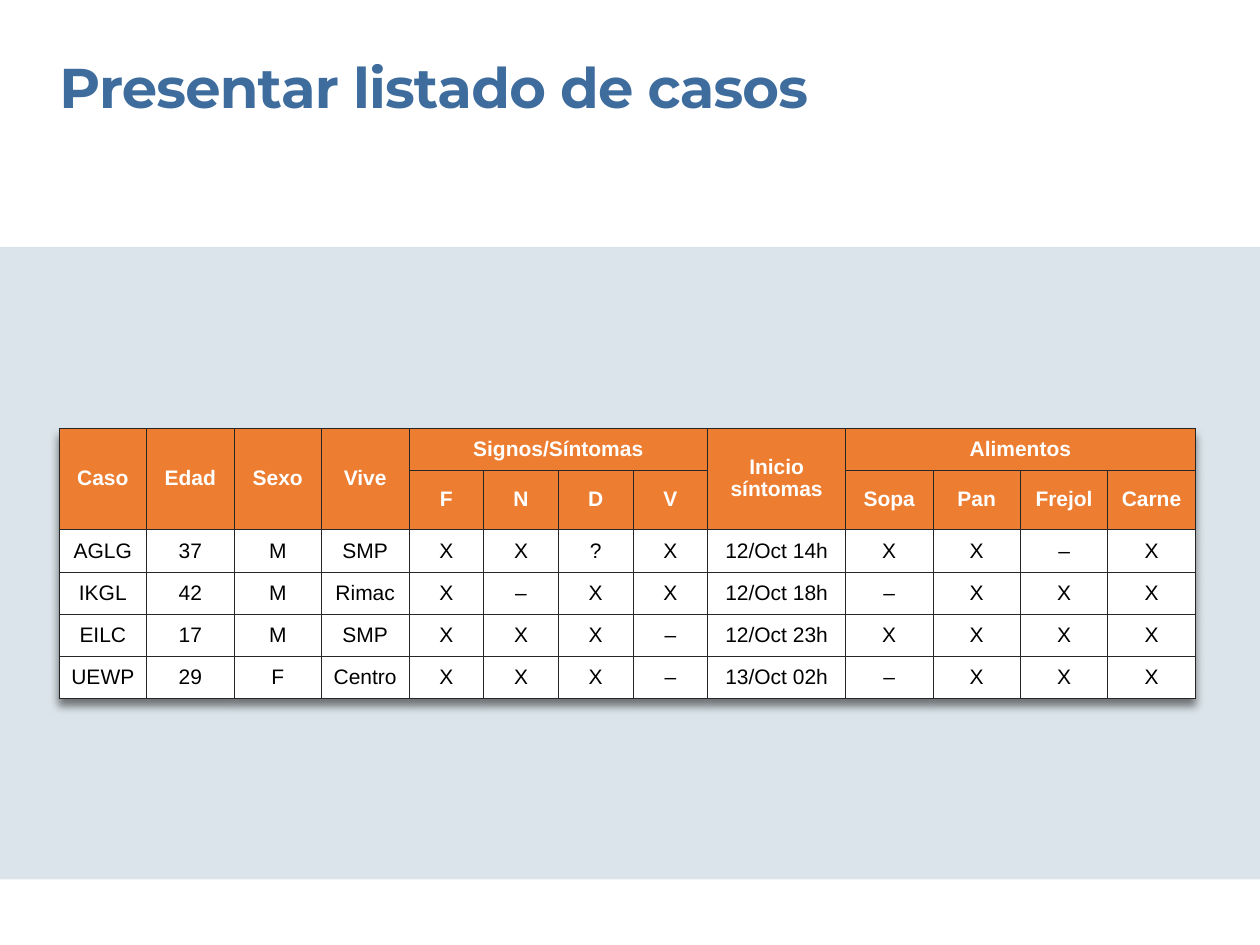
from dataclasses import dataclass

from lxml import etree
from pptx import Presentation
from pptx import util as u
from pptx.dml import color
from pptx.enum import shapes, text
from pptx.oxml import ns


@dataclass(frozen=True)
class Theme:
    """Colours, fonts and type sizes of the slide."""
    band: str = "DBE4EA"
    heading: str = "3D6C9D"
    header_fill: str = "ED7D31"
    header_ink: str = "FFFFFF"
    body_fill: str = "FFFFFF"
    body_ink: str = "000000"
    grid: str = "262626"
    shadow: str = "000000"
    title_font: str = "Montserrat"
    table_font: str = "Arial"
    title_size: float = 32
    table_size: float = 12


THEME = Theme()
TITLE = "Presentar listado de casos"
SIGNS = ["F", "N", "D", "V"]
FOODS = ["Sopa", "Pan", "Frejol", "Carne"]
HEADERS = [
    ["Caso", "Edad", "Sexo", "Vive", "Signos/Síntomas", "", "", "",
     "Inicio síntomas", "Alimentos", "", "", ""],
    [""] * 4 + SIGNS + [""] + FOODS,
]
CASES = [
    ["AGLG", "37", "M", "SMP", *"XX?X", "12/Oct 14h", *"XX–X"],
    ["IKGL", "42", "M", "Rimac", *"X–XX", "12/Oct 18h", *"–XXX"],
    ["EILC", "17", "M", "SMP", *"XXX–", "12/Oct 23h", *"XXXX"],
    ["UEWP", "29", "F", "Centro", *"XXX–", "13/Oct 02h", *"–XXX"],
]
COLUMN_WIDTHS = [50] * 4 + [42.7] * 4 + [78.7] + [50] * 4
ROW_HEIGHT = 24.1
TALL_COLUMNS = [0, 1, 2, 3, 8]
GROUP_STARTS = [4, 9]


def rgb(value):
    """Turn a hex string into a colour."""
    return color.RGBColor.from_string(value)


def write(frame, words, *, font, size, ink, bold=False, align=text.PP_ALIGN.LEFT,
          spacing=None, leading=None):
    """Put one formatted run into a text frame."""
    paragraph = frame.paragraphs[0]
    paragraph.alignment = align
    paragraph.line_spacing = leading
    run = paragraph.add_run()
    run.text = words
    run.font.name = font
    run.font.size = u.Pt(size)
    run.font.bold = bold
    run.font.color.rgb = rgb(ink)
    if spacing is not None:
        run.font._element.set("spc", str(int(spacing * 100)))


def add_band(slide):
    """Draw the pale band behind the table."""
    band = slide.shapes.add_shape(
        shapes.MSO_SHAPE.RECTANGLE, u.Pt(-4.3), u.Pt(141.1), u.Pt(724.3), u.Pt(361.4))
    band.shadow.inherit = False
    band.fill.solid()
    band.fill.fore_color.rgb = rgb(THEME.band)
    band.line.fill.background()


def set_title(slide):
    """Place and format the title placeholder."""
    title = slide.shapes.title
    title.left, title.top, title.width, title.height = map(u.Pt, (34, 30.2, 624.2, 39))
    frame = title.text_frame
    frame.margin_left = frame.margin_right = frame.margin_top = frame.margin_bottom = 0
    frame.word_wrap = True
    frame.vertical_anchor = text.MSO_ANCHOR.TOP
    frame.auto_size = text.MSO_AUTO_SIZE.SHAPE_TO_FIT_TEXT
    write(frame, TITLE, font=THEME.title_font, size=THEME.title_size,
          ink=THEME.heading, bold=True, spacing=-0.5)


def add_borders(cell, width=0.5):
    """Outline a cell on all four sides."""
    properties = cell._tc.get_or_add_tcPr()
    for position, side in enumerate(("lnL", "lnR", "lnT", "lnB")):
        line = etree.Element(ns.qn(f"a:{side}"), w=str(u.Pt(width)))
        fill = etree.SubElement(line, ns.qn("a:solidFill"))
        etree.SubElement(fill, ns.qn("a:srgbClr"), val=THEME.grid)
        properties.insert(position, line)


def add_shadow(table):
    """Give the table a soft shadow below it."""
    effects = etree.Element(ns.qn("a:effectLst"))
    shadow = etree.SubElement(
        effects, ns.qn("a:outerShdw"), blurRad=str(u.Pt(5)), dist=str(u.Pt(4)),
        dir="5400000", algn="t", rotWithShape="0")
    ink = etree.SubElement(shadow, ns.qn("a:srgbClr"), val=THEME.shadow)
    etree.SubElement(ink, ns.qn("a:alpha"), val="50000")
    table._tbl.tblPr.insert(0, effects)


def format_cell(cell, words, header):
    """Fill, outline and label one table cell."""
    cell.fill.solid()
    cell.fill.fore_color.rgb = rgb(THEME.header_fill if header else THEME.body_fill)
    add_borders(cell)
    cell.margin_left = cell.margin_right = u.Pt(5.4)
    cell.margin_top = cell.margin_bottom = u.Pt(3.6)
    cell.vertical_anchor = text.MSO_ANCHOR.MIDDLE
    if words:
        write(cell.text_frame, words, font=THEME.table_font, size=THEME.table_size,
              ink=THEME.header_ink if header else THEME.body_ink,
              bold=header, align=text.PP_ALIGN.CENTER, leading=0.92 if header else None)


def add_case_table(slide):
    """Build the list of cases with its two-level header."""
    rows = HEADERS + CASES
    table = slide.shapes.add_table(
        len(rows), len(COLUMN_WIDTHS), u.Pt(33.8), u.Pt(244.9),
        u.Pt(sum(COLUMN_WIDTHS)), u.Pt(ROW_HEIGHT * len(rows))).table
    table.first_row = table.horz_banding = False
    add_shadow(table)
    for column, width in zip(table.columns, COLUMN_WIDTHS):
        column.width = u.Pt(width)
    for row_index, labels in enumerate(rows):
        table.rows[row_index].height = u.Pt(ROW_HEIGHT)
        for column_index, label in enumerate(labels):
            format_cell(table.cell(row_index, column_index), label, row_index < len(HEADERS))
    for column_index in TALL_COLUMNS:
        table.cell(0, column_index).merge(table.cell(1, column_index))
    for start in GROUP_STARTS:
        table.cell(0, start).merge(table.cell(0, start + 3))


def main():
    """Build and save the slide."""
    deck = Presentation()
    deck.slide_width, deck.slide_height = u.Pt(720), u.Pt(540)
    slide = deck.slides.add_slide(deck.slide_layouts[5])
    add_band(slide)
    add_case_table(slide)
    set_title(slide)
    deck.save("out.pptx")


if __name__ == "__main__":
    main()
